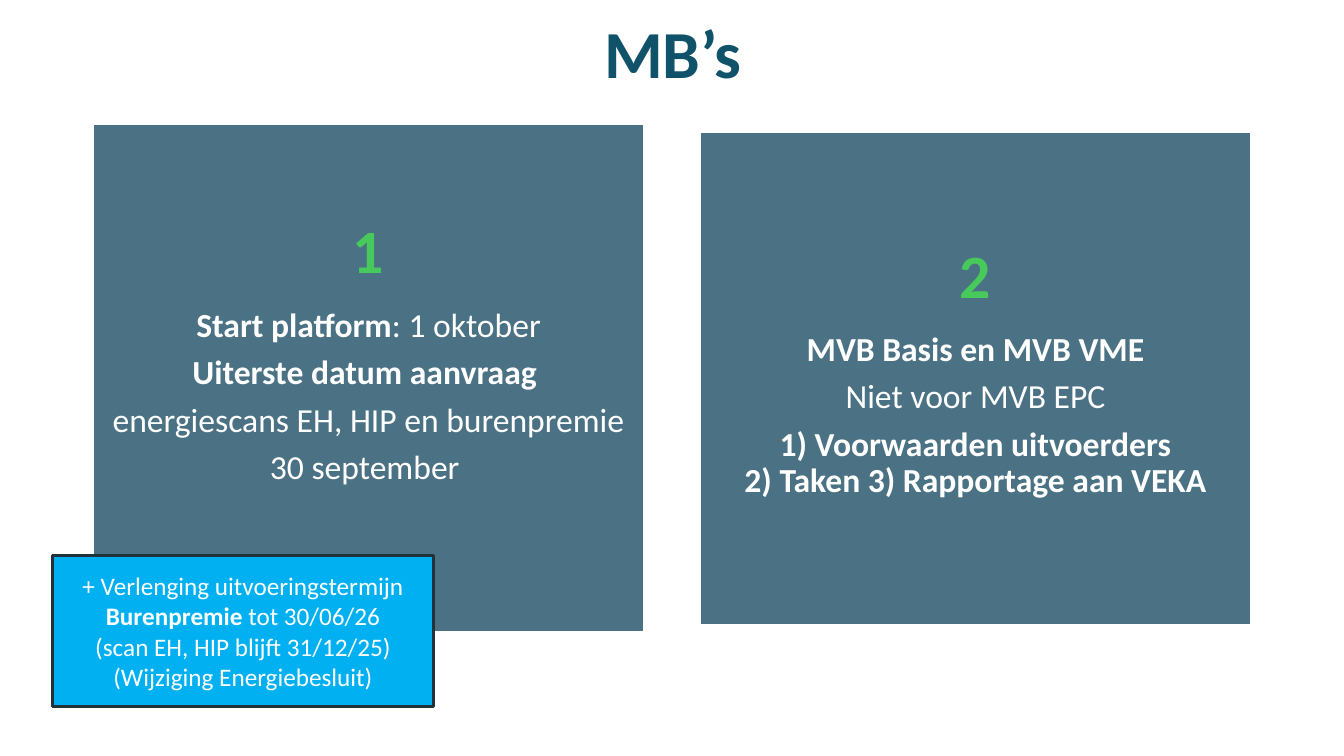
"""Build the MB's slide: two numbered panels and a callout."""
from pptx import Presentation
from pptx.dml.color import RGBColor
from pptx.enum.shapes import MSO_SHAPE as SHAPE
from pptx.enum.text import MSO_ANCHOR as ANCHOR, MSO_AUTO_SIZE as AUTO, PP_ALIGN as ALIGN
from pptx.util import Inches, Pt

COLORS = {"title": "105269", "panel": "4B7284", "number": "48C95C",
          "white": "FFFFFF", "callout": "00B0F0", "border": "21323A"}
FONT = "Calibri"
TITLE = "MB’s"
PANELS = [
    {"box": (0.92, 1.23, 5.47, 5.04), "side": 0.18, "top": 0.96, "number": "1",
     "lines": [[("Start platform", True), (": 1 oktober", False)],
               [("Uiterste datum aanvraag ", True)],
               [("energiescans EH, HIP en burenpremie ", False)],
               [("30 september ", False)]]},
    {"box": (6.94, 1.31, 5.47, 4.89), "side": 0.1, "top": 1.12, "number": "2",
     "lines": [[("MVB Basis en MVB VME", True)],
               [("Niet voor MVB EPC", False)],
               [("1) Voorwaarden uitvoerders\v2) Taken 3) Rapportage aan VEKA", True)]]},
]
CALLOUT_BOX = (0.52, 5.51, 3.78, 1.5)
CALLOUT = [
    [("+ Verlenging uitvoeringstermijn ", False), ("Burenpremie", True), (" tot 30/06/26", False)],
    [("(scan EH, HIP blijft 31/12/25)", False)],
    [("(Wijziging Energiebesluit)", False)],
]


def rgb(name):
    """Return the named colour."""
    return RGBColor.from_string(COLORS[name])


def add_text(tf, runs, size, color="white", spacing=None, after=0):
    """Write (text, bold) runs as the next centred paragraph."""
    p = tf.paragraphs[0] if not tf.text else tf.add_paragraph()
    p.alignment = ALIGN.CENTER
    p.line_spacing = spacing
    p.space_before, p.space_after = Pt(0), Pt(after)
    for text, bold in runs:
        for i, part in enumerate(text.split("\v")):
            if i:
                p.add_line_break()
            r = p.add_run()
            r.text = part
            r.font.name, r.font.size, r.font.bold = FONT, Pt(size), bold
            r.font.color.rgb = rgb(color)


def add_box(slide, box, fill, line):
    """Add a bordered rectangle and return its text frame."""
    sp = slide.shapes.add_shape(SHAPE.RECTANGLE, *map(Inches, box))
    sp.shadow.inherit = False
    sp.fill.solid()
    sp.fill.fore_color.rgb = rgb(fill)
    sp.line.color.rgb = rgb(line)
    sp.line.width = Pt(2)
    tf = sp.text_frame
    tf.word_wrap = True
    return tf


def main():
    """Assemble and save the slide."""
    prs = Presentation()
    prs.slide_width, prs.slide_height = Inches(13.33), Inches(7.5)
    s = prs.slides.add_slide(prs.slide_layouts[5])

    title = s.shapes.title
    title.left, title.top, title.width, title.height = map(Inches, (0.92, 0.33, 11.5, 1.02))
    title.text_frame.auto_size = AUTO.NONE
    title.text_frame.vertical_anchor = ANCHOR.TOP
    add_text(title.text_frame, [(TITLE, True)], 48, "title", spacing=Pt(38))

    for panel in PANELS:
        tf = add_box(s, panel["box"], "panel", "white")
        tf.vertical_anchor = ANCHOR.TOP
        tf.margin_left = tf.margin_right = Inches(panel["side"])
        tf.margin_top = Inches(panel["top"])
        add_text(tf, [(panel["number"], True)], 44, "number", spacing=0.9, after=15)
        for runs in panel["lines"]:
            add_text(tf, runs, 24, spacing=0.9, after=8)

    tf = add_box(s, CALLOUT_BOX, "callout", "border")
    tf.vertical_anchor = ANCHOR.MIDDLE
    for runs in CALLOUT:
        add_text(tf, runs, 18)

    prs.save("out.pptx")


if __name__ == "__main__":
    main()
